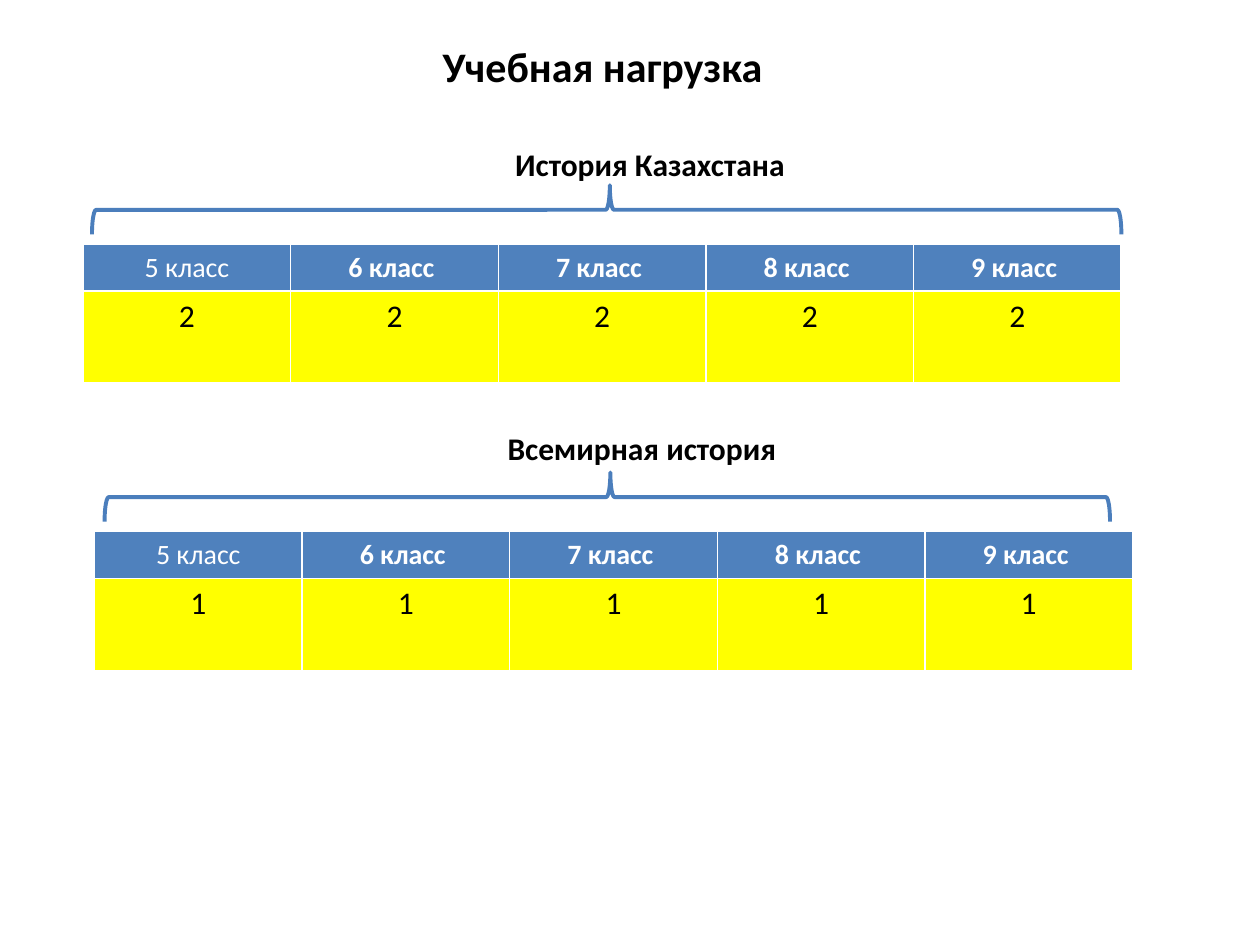
from pptx import Presentation
from pptx import util as u
from pptx.dml.color import RGBColor
from pptx.enum import shapes, text

FONT = "Calibri"
BLACK, WHITE = "000000", "FFFFFF"
BLUE, YELLOW, BRACE_BLUE = "4F81BD", "FFFF00", "4B7EBC"
GRADES = ["5 класс", "6 класс ", "7 класс ", "8 класс ", "9 класс "]
CENTER = text.PP_ALIGN.CENTER


def color(value):
    return RGBColor.from_string(value)


def inches(box):
    return [u.Inches(length) for length in box]


def write(frame, words, size, bold, ink=BLACK, align=None):
    para = frame.paragraphs[0]
    para.alignment = align
    span = para.add_run()
    span.text = words
    for name, value in {"name": FONT, "size": u.Pt(size), "bold": bold}.items():
        setattr(span.font, name, value)
    span.font.color.rgb = color(ink)


def add_label(page, box, words, size, wrap=False, align=None,
              anchor=text.MSO_ANCHOR.TOP):
    frame = page.shapes.add_textbox(*inches(box)).text_frame
    frame.word_wrap = wrap
    frame.vertical_anchor = anchor
    write(frame, words, size, True, align=align)


def add_brace(page, box):
    # A left brace turned a quarter, so that it spans the given box
    left, top, width, height = box
    turned = (left + (width - height) / 2, top + (height - width) / 2, height, width)
    brace = page.shapes.add_shape(shapes.MSO_SHAPE.LEFT_BRACE, *inches(turned))
    brace.rotation = 90
    brace.adjustments[0], brace.adjustments[1] = 0.083, 0.497
    brace.shadow.inherit = False
    brace.fill.background()
    brace.line.color.rgb = color(BRACE_BLUE)
    brace.line.width = u.Pt(2.25)


def add_hours_table(page, box, hours):
    table = page.shapes.add_table(2, len(GRADES), *inches(box)).table
    table.horz_banding = False
    for row, height in zip(table.rows, (0.37, 0.73)):
        row.height = u.Inches(height)
    for column, grade in enumerate(GRADES):
        header, value = table.cell(0, column), table.cell(1, column)
        for cell, fill in ((header, BLUE), (value, YELLOW)):
            cell.fill.solid()
            cell.fill.fore_color.rgb = color(fill)
        write(header.text_frame, grade, 16, column > 0, WHITE, CENTER)
        write(value.text_frame, hours, 18, False, BLACK, CENTER)


def add_subject(page, subject, hours, label_box, brace_box, table_box):
    add_label(page, label_box, subject, 18)
    add_brace(page, brace_box)
    add_hours_table(page, table_box, hours)


def main():
    deck = Presentation()
    deck.slide_width, deck.slide_height = u.Inches(10), u.Inches(7.5)
    page = deck.slides.add_slide(deck.slide_layouts[6])

    # Title
    add_label(page, (0.83, 0.21, 7.98, 0.63), "Учебная нагрузка ", 24, True,
              CENTER, text.MSO_ANCHOR.MIDDLE)

    # Weekly hours by subject
    add_subject(page, "История Казахстана", "2", (3.99, 1.1, 2.36, 0.4),
                (0.73, 1.47, 8.17, 0.39), (0.66, 1.94, 8.24, 1.1))
    add_subject(page, "Всемирная история", "1", (3.93, 3.36, 2.35, 0.4),
                (0.83, 3.75, 7.98, 0.39), (0.75, 4.22, 8.24, 1.1))

    deck.save("out.pptx")


if __name__ == "__main__":
    main()
